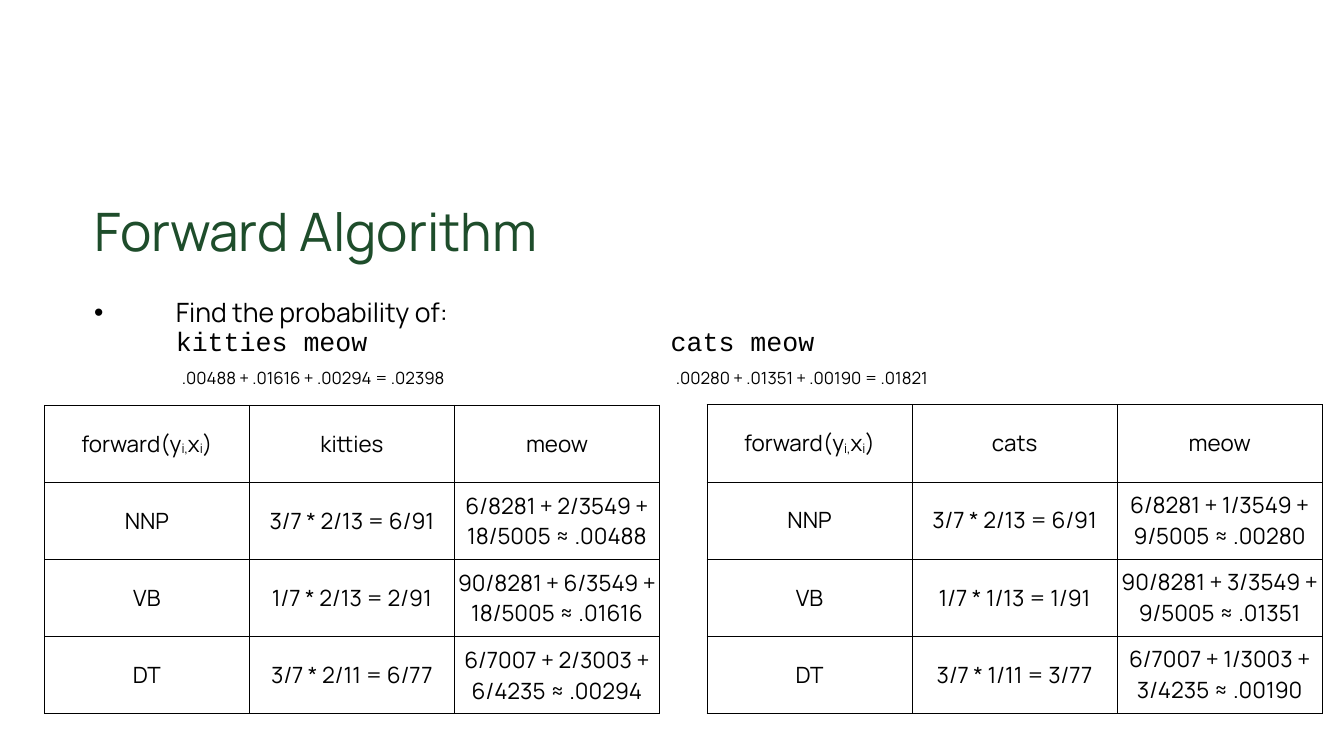
from dataclasses import dataclass

from lxml import etree
from pptx import Presentation
from pptx import util as u
from pptx.dml.color import RGBColor
from pptx.enum import text
from pptx.oxml import ns

PX = u.Inches(1) // 100  # 100 px to the inch
MIDDLE = text.MSO_ANCHOR.MIDDLE


@dataclass(frozen=True)
class Theme:
    green: str = "1E4D2B"
    black: str = "000000"
    font: str = "Manrope"
    mono: str = "Courier New"
    title: float = 75.7
    body: float = 38
    cell: float = 32
    note: float = 24
    border: float = 1


def add_element(parent, tag, **attributes):
    return etree.SubElement(parent, ns.qn(tag), attributes)


class Slide:
    def __init__(self, deck, theme):
        self.page = deck.slides.add_slide(deck.slide_layouts[6])
        self.theme = theme

    def style(self, font, size, color=None, name=None):
        font.name = name or self.theme.font
        font.size = u.Pt(size)
        font.color.rgb = RGBColor.from_string(color or self.theme.black)

    def frame(self, left, top, width, height, inset, anchor, wrap=True):
        box = self.page.shapes.add_textbox(*(n * PX for n in (left, top, width, height)))
        frame = box.text_frame
        frame.word_wrap = wrap
        frame.vertical_anchor = anchor
        frame.margin_left = frame.margin_right = inset * PX
        frame.margin_top = frame.margin_bottom = inset * PX
        return frame

    def title(self, words, *place):
        para = self.frame(*place, inset=10, anchor=MIDDLE).paragraphs[0]
        para.text = words
        self.style(para.font, self.theme.title, self.theme.green)

    def note(self, words, *place, wrap=True):
        frame = self.frame(*place, inset=6, anchor=MIDDLE, wrap=wrap)
        frame.auto_size = text.MSO_AUTO_SIZE.SHAPE_TO_FIT_TEXT
        para = frame.paragraphs[0]
        para.text = words
        self.style(para.font, self.theme.note)

    def bullet(self, lead, phrases, indent, tab, *place):
        """One bulleted paragraph: a lead line, then phrases set apart by a tab."""
        para = self.frame(*place, inset=10, anchor=text.MSO_ANCHOR.TOP).paragraphs[0]
        para.line_spacing = 0.9
        props = para._p.get_or_add_pPr()
        props.set("marL", str(indent * PX))
        props.set("indent", str(-indent * PX))
        add_element(props, "a:buFont", typeface="Arial")
        add_element(props, "a:buChar", char="•")
        add_element(add_element(props, "a:tabLst"), "a:tab", pos=str(tab * PX), algn="l")
        self.style(para.font, self.theme.body)
        for words, name in ((lead, self.theme.font), ("\t".join(phrases), self.theme.mono)):
            if para.runs:
                para.add_line_break()
            span = para.add_run()
            span.text = words
            self.style(span.font, self.theme.body, name=name)

    def border(self, cell):
        props = cell._tc.get_or_add_tcPr()
        for side in ("a:lnL", "a:lnR", "a:lnT", "a:lnB"):
            line = add_element(props, side, w=str(u.Pt(self.theme.border)))
            fill = add_element(line, "a:solidFill")
            add_element(fill, "a:srgbClr", val=self.theme.black)

    def table(self, rows, left, top, column, row):
        """Centred grid; a cell given as a tuple alternates plain and lowered spans."""
        across, down = len(rows[0]), len(rows)
        grid = self.page.shapes.add_table(
            down, across, left * PX, top * PX, across * column * PX, down * row * PX).table
        grid.first_row = grid.horz_banding = False
        for line in grid.rows:
            line.height = row * PX
        for strip in grid.columns:
            strip.width = column * PX
        for cell, content in zip(grid.iter_cells(), (c for r in rows for c in r)):
            self.border(cell)
            cell.fill.background()
            cell.vertical_anchor = MIDDLE
            cell.margin_left = cell.margin_right = 6 * PX
            cell.margin_top = cell.margin_bottom = 6 * PX
            para = cell.text_frame.paragraphs[0]
            para.alignment = text.PP_ALIGN.CENTER
            self.style(para.font, self.theme.cell)
            spans = content if isinstance(content, tuple) else (content,)
            for index, words in enumerate(spans):
                span = para.add_run()
                span.text = words
                self.style(span.font, self.theme.cell)
                if index % 2:
                    span.font._element.set("baseline", "-6000")


FORWARD = ("forward(y", "i,", "x", "i", ")")
KITTIES = [
    [FORWARD, "kitties", "meow"],
    ["NNP", "3/7 * 2/13 = 6/91", "6/8281 + 2/3549 + 18/5005 ≈ .00488"],
    ["VB", "1/7 * 2/13 = 2/91", "90/8281 + 6/3549 + 18/5005 ≈ .01616"],
    ["DT", "3/7 * 2/11 = 6/77", "6/7007 + 2/3003 + 6/4235 ≈ .00294"],
]
CATS = [
    [FORWARD, "cats", "meow"],
    ["NNP", "3/7 * 2/13 = 6/91", "6/8281 + 1/3549 + 9/5005 ≈ .00280"],
    ["VB", "1/7 * 1/13 = 1/91", "90/8281 + 3/3549 + 9/5005 ≈ .01351"],
    ["DT", "3/7 * 1/11 = 3/77", "6/7007 + 1/3003 + 3/4235 ≈ .00190"],
]


def main():
    deck = Presentation()
    deck.slide_width, deck.slide_height = 2667 * PX, 1500 * PX
    slide = Slide(deck, Theme())
    slide.title("Forward Algorithm", 177, 373, 2392, 168)
    slide.bullet("Find the probability of:", ("kitties meow", "cats meow"), 162, 1144,
                 177, 584, 2392, 778)
    slide.table(KITTIES, 88, 804, column=407, row=153)
    slide.table(CATS, 1403, 803, column=407, row=153)
    slide.note(".00280 + .01351 + .00190 = .01821", 1335, 722, 532, 56, wrap=False)
    slide.note(".00488 + .01616 + .00294 = .02398", 355, 722, 603, 56)
    deck.save("out.pptx")


if __name__ == "__main__":
    main()
